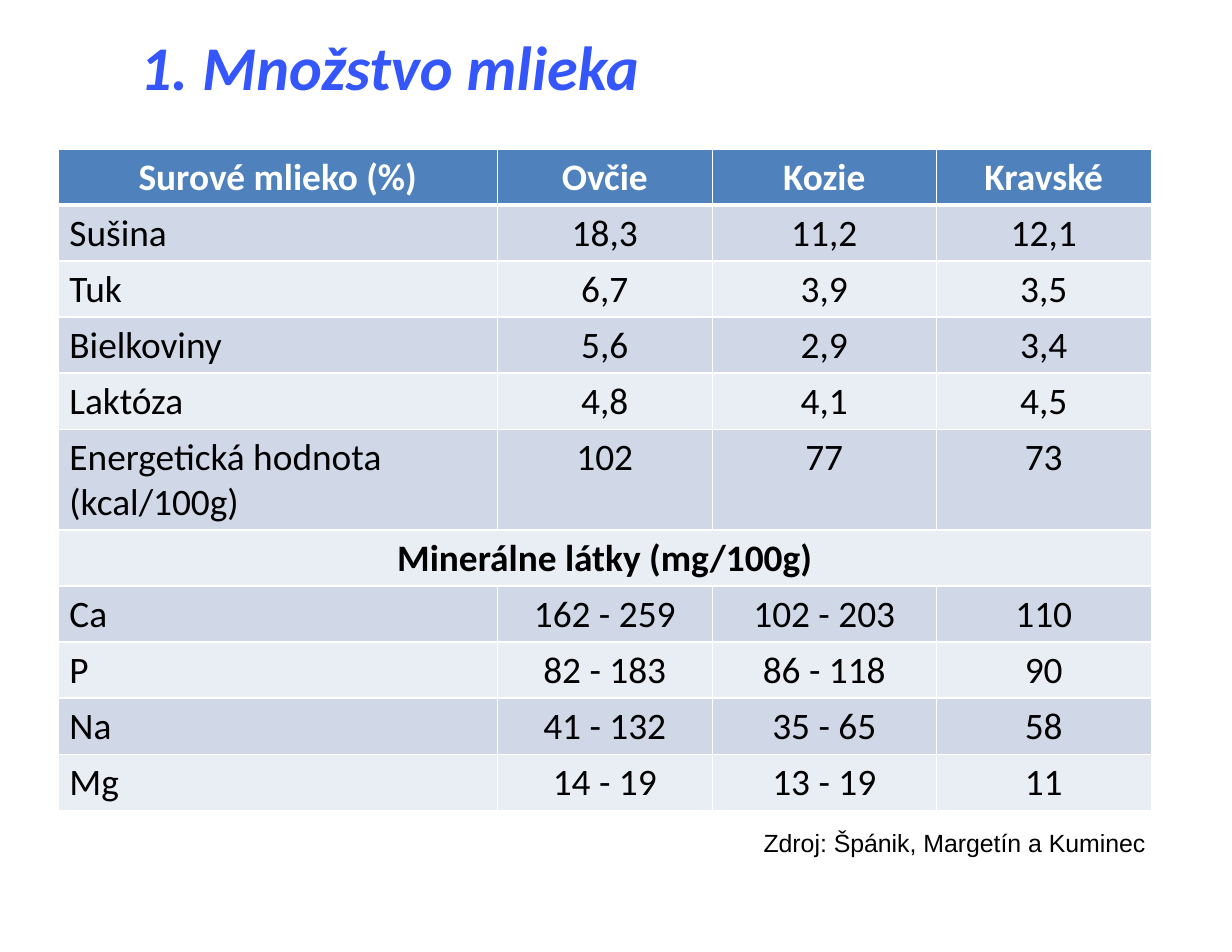
from lxml.etree import SubElement
from pptx import Presentation
from pptx.dml.color import RGBColor
from pptx.enum.text import MSO_ANCHOR, MSO_AUTO_SIZE, PP_ALIGN as AL
from pptx.oxml.ns import qn
from pptx.util import Inches, Pt


def rgb(value):
    return RGBColor.from_string(value)


def write(tf, text, size=24, font="Calibri", color="000000", bold=False, italic=False, align=AL.LEFT):
    p = tf.paragraphs[0]
    p.alignment = align
    r = p.add_run()
    r.text = text
    f = r.font
    f.size, f.name, f.bold, f.italic = Pt(size), font, bold, italic
    f.color.rgb = rgb(color)
    return p


prs = Presentation()
prs.slide_width, prs.slide_height = Inches(11), Inches(8.5)
s = prs.slides.add_slide(prs.slide_layouts[1])
title, source = s.shapes.title, s.placeholders[1]

for sp, box in ((title, (1.25, 0.25, 8.29, 0.67)), (source, (0.65, 7.39, 9.58, 0.27))):
    sp.left, sp.top, sp.width, sp.height = [Inches(v) for v in box]
    tf = sp.text_frame
    tf.margin_left = tf.margin_top = tf.margin_right = tf.margin_bottom = 0
    tf.word_wrap = True
    tf.auto_size = MSO_AUTO_SIZE.SHAPE_TO_FIT_TEXT
    tf.vertical_anchor = MSO_ANCHOR.TOP
    pPr = tf.paragraphs[0]._p.get_or_add_pPr()
    SubElement(pPr, qn("a:buNone"))

p = write(title.text_frame, "1. Množstvo mlieka", size=40, color="3456FB", bold=True, italic=True)
pPr = p._p.get_or_add_pPr()
pPr.set("marL", str(Inches(0.38)))
pPr.set("indent", str(Inches(-0.38)))

p = write(source.text_frame, "Zdroj: Špánik, Margetín a Kuminec", size=16, font="Arial", align=AL.RIGHT)
p.space_before = Pt(0)
pPr = p._p.get_or_add_pPr()
pPr.set("marL", "0")
pPr.set("indent", "0")

rows = [
    ("Surové mlieko (%)", "Ovčie", "Kozie", "Kravské"),
    ("Sušina", "18,3", "11,2", "12,1"),
    ("Tuk", "6,7", "3,9", "3,5"),
    ("Bielkoviny", "5,6", "2,9", "3,4"),
    ("Laktóza", "4,8", "4,1", "4,5"),
    ("Energetická hodnota (kcal/100g)", "102", "77", "73"),
    ("Minerálne látky (mg/100g)",),
    ("Ca", "162 - 259", "102 - 203", "110"),
    ("P", "82 - 183", "86 - 118", "90"),
    ("Na", "41 - 132", "35 - 65", "58"),
    ("Mg", "14 - 19", "13 - 19", "11"),
]
widths = (3.92, 1.92, 2, 1.92)
row_height = 0.41
table = s.shapes.add_table(len(rows), len(widths), Inches(0.52), Inches(1.33),
                           Inches(sum(widths)), Inches(row_height * len(rows))).table
for col, width in zip(table.columns, widths):
    col.width = Inches(width)

for i, values in enumerate(rows):
    table.rows[i].height = Inches(row_height)
    header, section = i == 0, len(values) == 1
    if section:
        table.cell(i, 0).merge(table.cell(i, len(widths) - 1))
    for j in range(len(widths)):
        cell = table.cell(i, j)
        tcPr = cell._tc.get_or_add_tcPr()
        for side in "LRTB":
            thick = (header and side == "B") or (i == 1 and side == "T")
            ln = SubElement(tcPr, qn(f"a:ln{side}"), w=str(Pt(3 if thick else 1)))
            fill = SubElement(ln, qn("a:solidFill"))
            SubElement(fill, qn("a:srgbClr"), val="FFFFFF")
        cell.fill.solid()
        cell.fill.fore_color.rgb = rgb("4F81BD" if header else "D0D8E8" if i % 2 else "E9EDF4")
        if j < len(values):
            write(cell.text_frame, values[j], bold=header or section,
                  color="FFFFFF" if header else "000000",
                  align=AL.CENTER if header or section or j else AL.LEFT)

prs.save("out.pptx")
